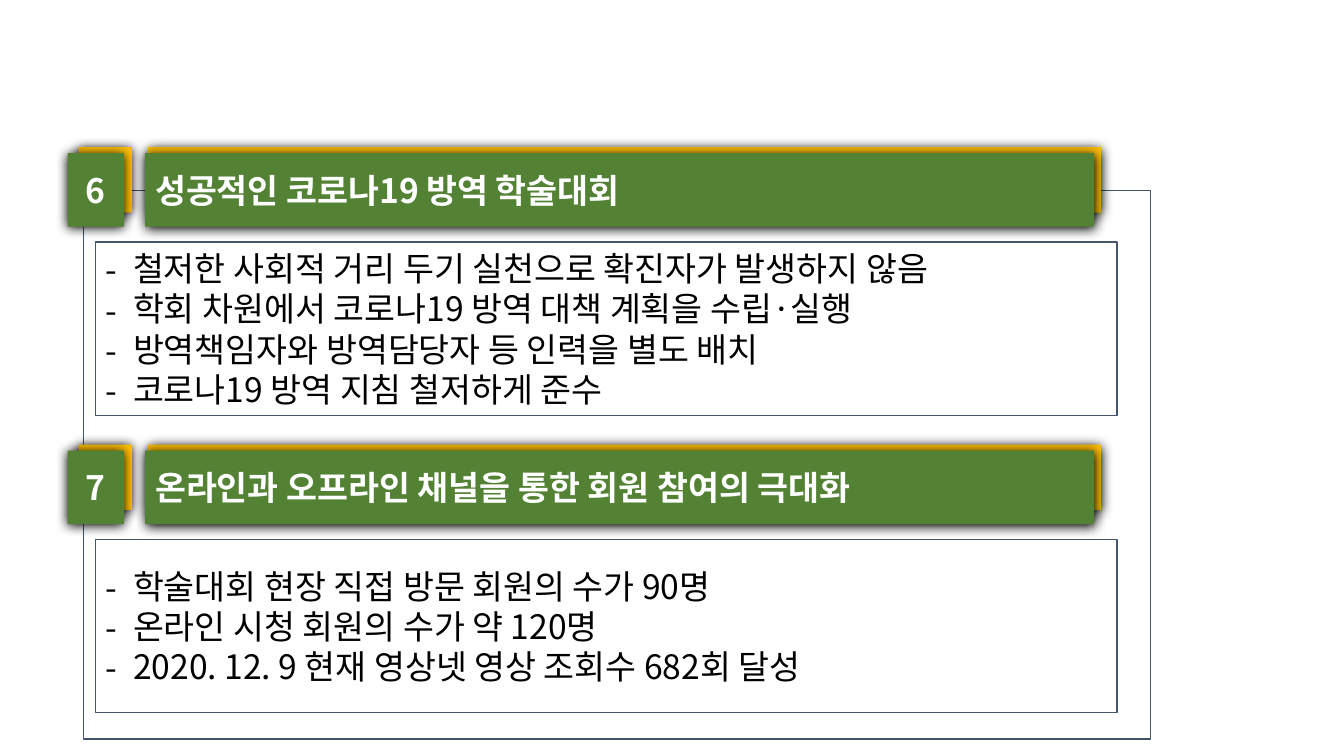
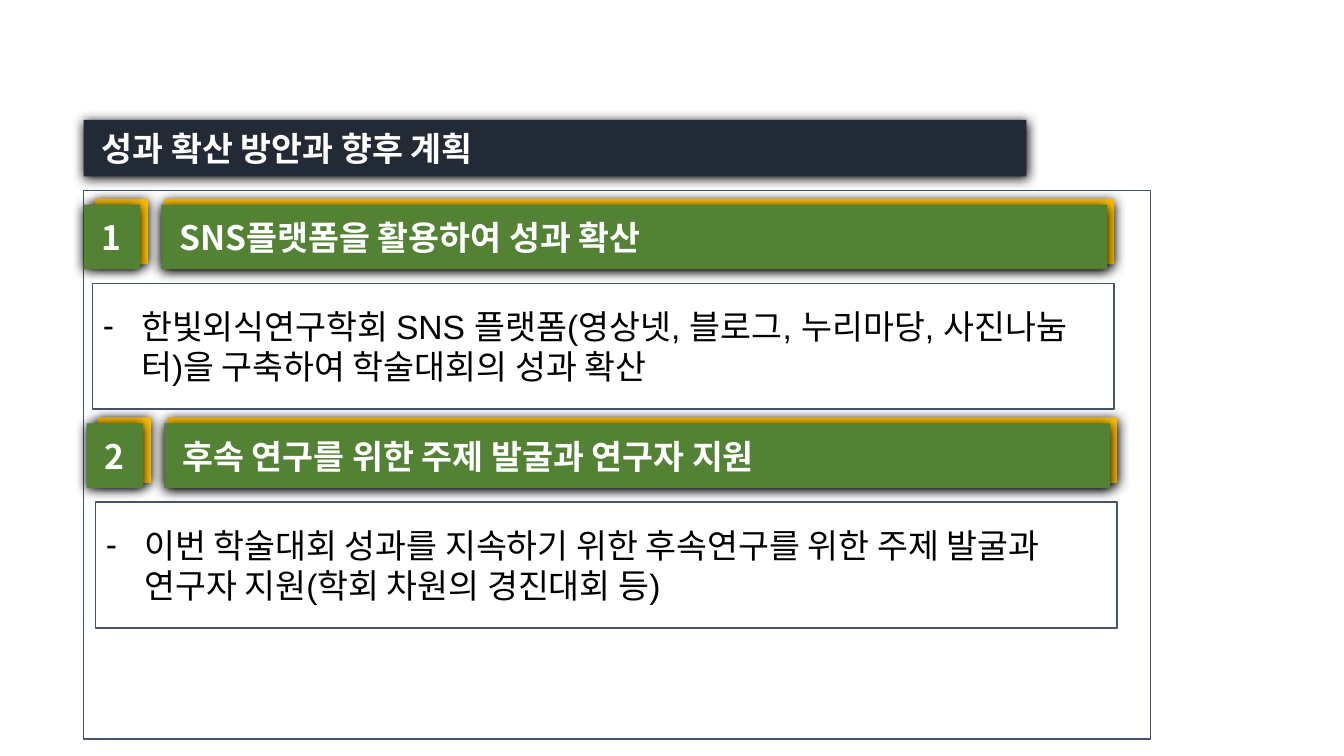
import dataclasses

import lxml.etree
import pptx
import pptx.dml.color
import pptx.enum.shapes
import pptx.enum.text
import pptx.oxml.ns
import pptx.util

Inches = pptx.util.Inches
Pt = pptx.util.Pt
ALIGN = pptx.enum.text.PP_ALIGN


@dataclasses.dataclass(frozen=True)
class Theme:
    white: str = "FFFFFF"
    text: str = "000000"
    outline: str = "44546A"
    dark: str = "222A35"
    green: str = "548235"
    gold: str = "FFC000"
    font: str = "Noto Sans CJK KR"
    latin: str = "Arial"
    size: float = 24
    leading: float = 28.8


@dataclasses.dataclass(frozen=True)
class SectionStyle:
    """Measures in inches, offsets taken from the section's top left corner."""
    bar_w: float
    bar_h: float
    bar_inset: float
    list_dx: float
    list_dy: float
    list_h: float
    hang: float
    list_font: str


THEME = Theme()
COVID_STYLE = SectionStyle(9.41, 0.73, 0.1, 0.28, 0.94, 1.72, 0.27, THEME.font)
PLAN_STYLE = SectionStyle(9.38, 0.64, 0.18, 0.09, 0.84, 1.25, 0.38, THEME.latin)


# Shared helpers

def rgb(value):
    return pptx.dml.color.RGBColor.from_string(value)


def add_child(parent, tag, **attrs):
    child = lxml.etree.SubElement(parent, pptx.oxml.ns.qn(tag))
    for name, value in attrs.items():
        child.set(name, str(value))
    return child


def place(sp, x, y, w, h):
    sp.left, sp.top, sp.width, sp.height = (Inches(v) for v in (x, y, w, h))


def paint(sp, fill=None, line=None, shadow=False):
    """Set fill, outline and the soft shadow of a shape or placeholder."""
    if fill:
        sp.fill.solid()
        sp.fill.fore_color.rgb = rgb(fill)
    else:
        sp.fill.background()
    if line:
        sp.line.color.rgb = rgb(line)
        sp.line.width = Pt(1)
    else:
        sp.line.fill.background()
    sp.shadow.inherit = False
    if shadow:
        effects = sp._element.spPr.find(pptx.oxml.ns.qn("a:effectLst"))
        outer = add_child(effects, "a:outerShdw", blurRad=Pt(8.5), dist=Pt(1),
                          dir=90 * 60000, algn="t", rotWithShape=0)
        add_child(outer, "a:srgbClr", val="000000")


def add_box(slide, x, y, w, h, **look):
    sp = slide.shapes.add_shape(pptx.enum.shapes.MSO_SHAPE.RECTANGLE,
                                Inches(x), Inches(y), Inches(w), Inches(h))
    paint(sp, **look)
    return sp


def write(sp, text, color=THEME.white, bold=True, font=THEME.font,
          align=ALIGN.LEFT, inset=0.1, hang=None, leading=None):
    """Write text, one paragraph a line; hang turns it into a dash list."""
    tf = sp.text_frame
    tf.word_wrap = True
    tf.auto_size = pptx.enum.text.MSO_AUTO_SIZE.NONE
    tf.vertical_anchor = pptx.enum.text.MSO_ANCHOR.MIDDLE
    tf.margin_left = Inches(inset)
    for i, line in enumerate(text.split("\n")):
        p = tf.add_paragraph() if i else tf.paragraphs[0]
        p.alignment = align
        p.space_before = Pt(0)
        if leading:
            p.line_spacing = Pt(leading)
        if hang:
            pPr = p._p.get_or_add_pPr()
            pPr.set("marL", str(Inches(hang)))
            pPr.set("indent", str(-Inches(hang)))
            add_child(pPr, "a:buFont", typeface=font)
            add_child(pPr, "a:buChar", char="-")
        r = p.add_run()
        r.text = line
        r.font.size = Pt(THEME.size)
        r.font.bold = bold
        r.font.color.rgb = rgb(color)
        r.font.name = font
        add_child(r._r.get_or_add_rPr(), "a:ea", typeface=THEME.font)


# Regions

def add_frame(slide):
    add_box(slide, 0.83, 1.89, 10.58, 5.44, line=THEME.outline)


def fill_title(slide, text):
    title = slide.shapes.title
    if not text:
        title._element.getparent().remove(title._element)
        return
    place(title, 0.83, 1.19, 9.35, 0.56)
    paint(title, fill=THEME.dark, shadow=True)
    write(title, text, inset=0.18)


def add_plate(slide, x, y, w, h, back_dx, back_w, text, **fmt):
    """Green plate over a gold one that shows at the top and right."""
    add_box(slide, x + back_dx, y, back_w, 0.65, fill=THEME.gold, shadow=True)
    sp = add_box(slide, x, y + 0.06, w, h, fill=THEME.green, shadow=True)
    write(sp, text, **fmt)


def add_section(slide, body, x, y, style, number, heading, items):
    # Number and heading
    add_plate(slide, x, y, 0.56, style.bar_h, 0.11, 0.53, number,
              align=ALIGN.CENTER)
    add_plate(slide, x + 0.77, y, style.bar_w, style.bar_h, 0.03,
              style.bar_w + 0.04, heading, inset=style.bar_inset)
    # List
    place(body, x + style.list_dx, y + style.list_dy, 10.13, style.list_h)
    paint(body, fill=THEME.white, line=THEME.outline)
    write(body, items, color=THEME.text, bold=False, font=style.list_font,
          hang=style.hang, leading=THEME.leading)


def add_sections_slide(prs, style, sections, title=None):
    slide = prs.slides.add_slide(prs.slide_layouts.get_by_name("Two Content"))
    bodies = [slide.placeholders[1], slide.placeholders[2]]
    fill_title(slide, title)
    add_frame(slide)
    for body, (x, y, number, heading, items) in zip(bodies, sections):
        add_section(slide, body, x, y, style, number, heading, items)


def main():
    prs = pptx.Presentation()
    prs.slide_width, prs.slide_height = Inches(13.33), Inches(7.5)

    add_sections_slide(prs, COVID_STYLE, [
        (0.67, 1.46, "6", "성공적인 코로나19 방역 학술대회",
         "철저한 사회적 거리 두기 실천으로 확진자가 발생하지 않음\n"
         "학회 차원에서 코로나19 방역 대책 계획을 수립·실행\n"
         "방역책임자와 방역담당자 등 인력을 별도 배치\n"
         "코로나19 방역 지침 철저하게 준수"),
        (0.67, 4.41, "7", "온라인과 오프라인 채널을 통한 회원 참여의 극대화",
         "학술대회 현장 직접 방문 회원의 수가 90명\n"
         "온라인 시청 회원의 수가 약 120명\n"
         "2020. 12. 9 현재 영상넷 영상 조회수 682회 달성"),
    ])

    add_sections_slide(prs, PLAN_STYLE, [
        (0.83, 1.97, "1", "SNS플랫폼을 활용하여 성과 확산",
         "한빛외식연구학회 SNS 플랫폼(영상넷, 블로그, 누리마당, "
         "사진나눔터)을 구축하여 학술대회의 성과 확산"),
        (0.86, 4.14, "2", "후속 연구를 위한 주제 발굴과 연구자 지원",
         "이번 학술대회 성과를 지속하기 위한 후속연구를 위한 주제 발굴과 "
         "연구자 지원(학회 차원의 경진대회 등)"),
    ], title="성과 확산 방안과 향후 계획")

    prs.save("out.pptx")


if __name__ == "__main__":
    main()
